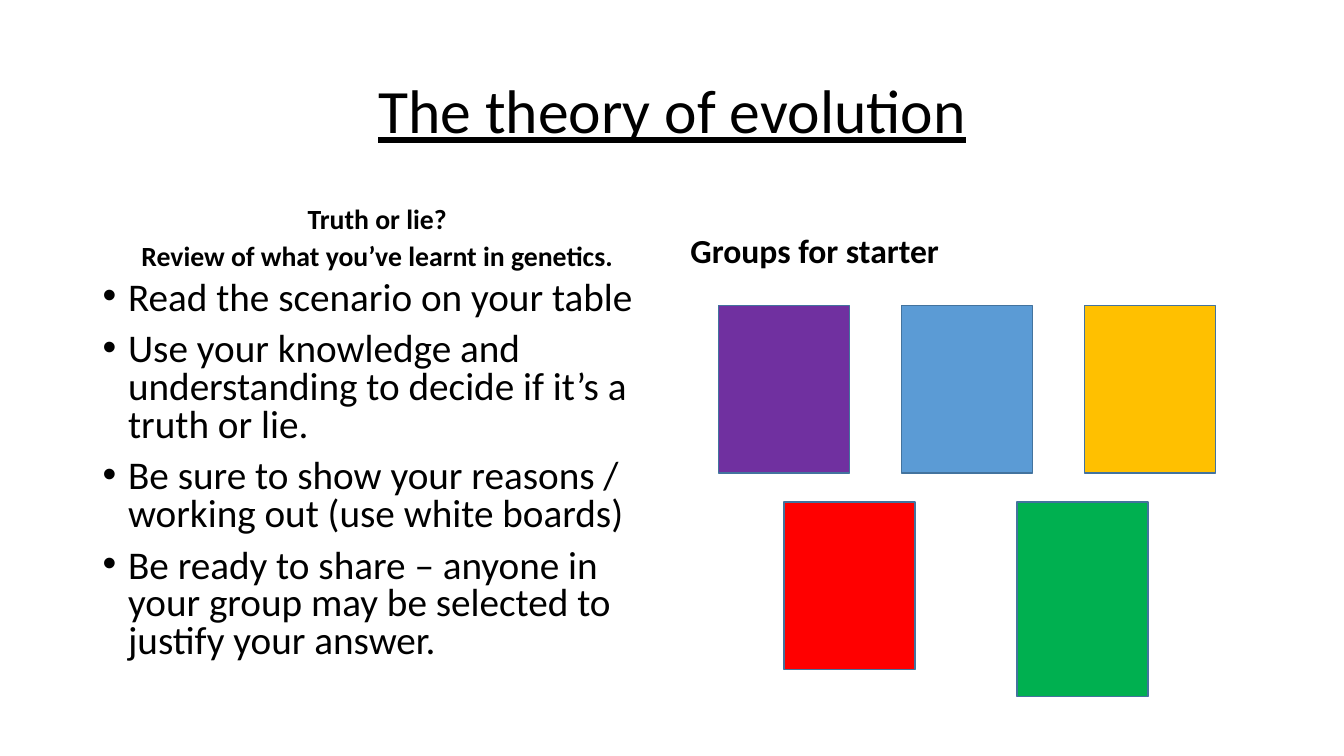
import pptx
import pptx.dml.color
import pptx.enum.shapes
import pptx.enum.text
import pptx.util
from lxml import etree
from pptx.oxml.ns import qn

Cm = pptx.util.Cm
ALIGN = pptx.enum.text.PP_ALIGN
ANCHOR = pptx.enum.text.MSO_ANCHOR

MARGIN = 2.34
RIGHT_COLUMN = 17.15
HEADING_TOP, HEADING_HEIGHT = 4.67, 2.29
STEPS_TOP = HEADING_TOP + HEADING_HEIGHT
LEFT_WIDTH, RIGHT_WIDTH = 14.33, 14.4

STEPS = [
    "Read the scenario on your table",
    "Use your knowledge and understanding to decide if it’s a truth or lie.",
    "Be sure to show your reasons / working out (use white boards)",
    "Be ready to share – anyone in your group may be selected to justify your answer.",
]


def rgb(hex_colour):
    return pptx.dml.color.RGBColor.from_string(hex_colour)


def prepare_frame(frame, anchor):
    frame.word_wrap = True
    frame.auto_size = pptx.enum.text.MSO_AUTO_SIZE.NONE
    frame.vertical_anchor = anchor


def write_paragraphs(frame, lines, size, align=ALIGN.LEFT, spacing=0.9,
                     before=10, bold=False, underline=False):
    for index, line in enumerate(lines):
        paragraph = frame.paragraphs[0] if index == 0 else frame.add_paragraph()
        paragraph.alignment = align
        paragraph.line_spacing = spacing
        paragraph.space_before = pptx.util.Pt(before)
        run = paragraph.add_run()
        run.text = line
        run.font.name = "Calibri"
        run.font.size = pptx.util.Pt(size)
        run.font.bold = bold
        run.font.underline = underline
        run.font.color.rgb = rgb("000000")


def add_bullets(frame, indent):
    for paragraph in frame.paragraphs:
        properties = paragraph._p.get_or_add_pPr()
        properties.set("marL", str(Cm(indent)))
        properties.set("indent", str(-Cm(indent)))
        etree.SubElement(properties, qn("a:buFont")).set("typeface", "Arial")
        etree.SubElement(properties, qn("a:buChar")).set("char", "•")


def place_title(slide, left, top, width, height):
    title = slide.shapes.title
    title.left, title.top = Cm(left), Cm(top)
    title.width, title.height = Cm(width), Cm(height)
    prepare_frame(title.text_frame, ANCHOR.MIDDLE)
    write_paragraphs(title.text_frame, ["The theory of evolution"], 44,
                     ALIGN.CENTER, before=0, underline=True)


def add_text_area(slide, left, top, width, height, anchor):
    area = slide.shapes.add_textbox(Cm(left), Cm(top), Cm(width), Cm(height))
    prepare_frame(area.text_frame, anchor)
    return area.text_frame


def add_heading(slide, left, top, width, height, lines, size, **style):
    heading = add_text_area(slide, left, top, width, height, ANCHOR.BOTTOM)
    write_paragraphs(heading, lines, size, bold=True, **style)


def add_steps(slide, left, top, width, height):
    steps = add_text_area(slide, left, top, width, height, ANCHOR.TOP)
    write_paragraphs(steps, STEPS, 28, spacing=0.8)
    add_bullets(steps, 0.64)


def add_group_cards(slide, left, top):
    """Three cards above two, one colour per starter group."""
    card_width, card_height = 3.3, 4.22
    row_step = 4.95
    rows = [
        (0, 4.61, [("7030A0", card_height), ("5B9BD5", card_height),
                   ("FFC000", card_height)]),
        (1.65, 5.87, [("FF0000", card_height), ("00B050", 4.9)]),
    ]
    for row, (offset, column_step, cards) in enumerate(rows):
        for column, (colour, height) in enumerate(cards):
            card = slide.shapes.add_shape(
                pptx.enum.shapes.MSO_SHAPE.RECTANGLE,
                Cm(left + offset + column * column_step),
                Cm(top + row * row_step), Cm(card_width), Cm(height))
            card.shadow.inherit = False
            card.fill.solid()
            card.fill.fore_color.rgb = rgb(colour)
            card.line.color.rgb = rgb("43739E")
            card.line.width = pptx.util.Pt(1)


def main():
    presentation = pptx.Presentation()
    presentation.slide_width = Cm(33.87)
    presentation.slide_height = Cm(19.05)
    slide = presentation.slides.add_slide(presentation.slide_layouts[5])

    place_title(slide, MARGIN, 1.02, 29.21, 3.68)
    add_heading(slide, MARGIN, HEADING_TOP, LEFT_WIDTH, HEADING_HEIGHT,
                ["Truth or lie?", "Review of what you’ve learnt in genetics."],
                19.8, align=ALIGN.CENTER, spacing=0.7)
    add_steps(slide, MARGIN, STEPS_TOP, LEFT_WIDTH, 10.24)
    add_heading(slide, RIGHT_COLUMN, HEADING_TOP, RIGHT_WIDTH, HEADING_HEIGHT,
                ["Groups for starter"], 24)
    add_group_cards(slide, RIGHT_COLUMN + 0.96, 7.7)
    presentation.save("out.pptx")


if __name__ == "__main__":
    main()
